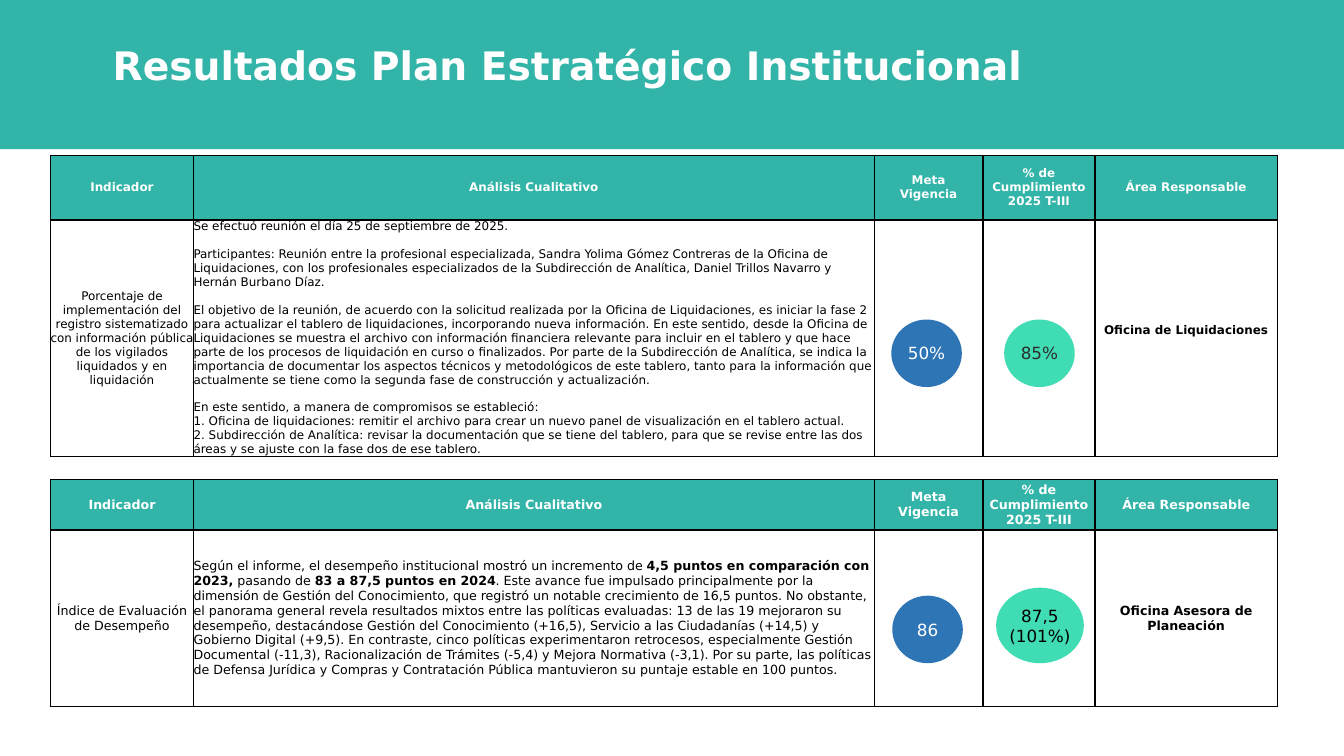
"""Build the slide with the results of the institutional strategic plan."""
from dataclasses import dataclass

import lxml.etree
import pptx
import pptx.dml.color
import pptx.enum.shapes
import pptx.enum.text
import pptx.oxml.ns
import pptx.slide
import pptx.table
import pptx.text.text
import pptx.util

PX = 9144
FONT = "DejaVu Sans"
COLORS = {
    "teal": "32B4A8",
    "mint": "40DCB3",
    "blue": "2E75B6",
    "white": "FFFFFF",
    "black": "000000",
    "charcoal": "2D2D2D",
}
CENTER = pptx.enum.text.PP_ALIGN.CENTER
LEFT = pptx.enum.text.PP_ALIGN.LEFT
MIDDLE = pptx.enum.text.MSO_ANCHOR.MIDDLE
COLUMN_WIDTHS = (142, 675, 108, 111, 181)
HEADINGS = (
    "Indicador",
    "Análisis Cualitativo",
    "Meta\vVigencia",
    "% de Cumplimiento 2025 T-III",
    "Área Responsable",
)


@dataclass(frozen=True)
class Paragraph:
    text: str
    space_before: float = 0


@dataclass(frozen=True)
class Indicator:
    top: int
    header_height: int
    body_height: int
    size: float
    name: str
    analysis: tuple[Paragraph, ...]
    area: str
    area_bottom: int = 0


@dataclass(frozen=True)
class Score:
    left: int
    top: int
    width: int
    height: int
    fill: str
    ink: str
    lines: tuple[str, ...]


BLANK_LINE = 9.9
PERFORMANCE_GAINS = (
    "Según el informe, el desempeño institucional mostró un incremento de **4,5 puntos "
    "en comparación con 2023,** pasando de **83 a 87,5 puntos en 2024**. Este avance "
    "fue impulsado principalmente por la dimensión de Gestión del Conocimiento, que "
    "registró un notable crecimiento de 16,5 puntos."
)
POLICY_RESULTS = (
    "No obstante, el panorama general revela resultados mixtos entre las políticas "
    "evaluadas: 13 de las 19 mejoraron su desempeño, destacándose Gestión del "
    "Conocimiento (+16,5), Servicio a las Ciudadanías (+14,5) y Gobierno Digital (+9,5). "
    "En contraste, cinco políticas experimentaron retrocesos, especialmente Gestión "
    "Documental (-11,3), Racionalización de Trámites (-5,4) y Mejora Normativa (-3,1). "
    "Por su parte, las políticas de Defensa Jurídica y Compras y Contratación Pública "
    "mantuvieron su puntaje estable en 100 puntos."
)
INDICATORS = (
    Indicator(
        154, 64, 235, 8.5,
        "Porcentaje de implementación del registro sistematizado con información "
        "pública de los vigilados liquidados y en liquidación",
        (
            Paragraph("Se efectuó reunión el día 25 de septiembre de 2025."),
            Paragraph(
                "Participantes: Reunión entre la profesional especializada, Sandra Yolima Gómez "
                "Contreras de la Oficina de Liquidaciones, con los profesionales especializados "
                "de la Subdirección de Analítica, Daniel Trillos Navarro y Hernán Burbano Díaz.",
                BLANK_LINE),
            Paragraph(
                "El objetivo de la reunión, de acuerdo con la solicitud realizada por la Oficina "
                "de Liquidaciones, es iniciar la fase 2 para actualizar el tablero de "
                "liquidaciones, incorporando nueva información. En este sentido, desde la Oficina "
                "de Liquidaciones se muestra el archivo con información financiera relevante para "
                "incluir en el tablero y que hace parte de los procesos de liquidación en curso o "
                "finalizados. Por parte de la Subdirección de Analítica, se indica la importancia "
                "de documentar los aspectos técnicos y metodológicos de este tablero, tanto para "
                "la información que actualmente se tiene como la segunda fase de construcción y "
                "actualización.",
                BLANK_LINE),
            Paragraph("En este sentido, a manera de compromisos se estableció:", BLANK_LINE),
            Paragraph(
                "1. Oficina de liquidaciones: remitir el archivo para crear un nuevo panel de "
                "visualización en el tablero actual."),
            Paragraph(
                "2. Subdirección de Analítica: revisar la documentación que se tiene del tablero, "
                "para que se revise entre las dos áreas y se ajuste con la fase dos de ese "
                "tablero."),
        ),
        "Oficina de Liquidaciones", 15),
    Indicator(
        476, 50, 175, 9,
        "Índice de Evaluación de Desempeño",
        (Paragraph(" ".join((PERFORMANCE_GAINS, POLICY_RESULTS))),),
        "Oficina Asesora de Planeación"),
)
SCORES = (
    Score(996, 317, 70, 67, "mint", "charcoal", ("85%",)),
    Score(884, 317, 70, 67, "blue", "white", ("50%",)),
    Score(988, 583, 87, 75, "mint", "black", ("87,5", "(101%)")),
    Score(885, 591, 70, 67, "blue", "white", ("86",)),
)


def rgb(color: str) -> pptx.dml.color.RGBColor:
    return pptx.dml.color.RGBColor.from_string(COLORS[color])


def apply(target: object, values: dict[str, object]) -> None:
    for name, value in values.items():
        setattr(target, name, value)


def write(frame: pptx.text.text.TextFrame, paragraphs: tuple[Paragraph, ...], size: float,
          ink: str, bold: bool = False, align: int = CENTER) -> None:
    for index, content in enumerate(paragraphs):
        line = frame.paragraphs[0] if index == 0 else frame.add_paragraph()
        line.alignment = align
        if content.space_before:
            line.space_before = pptx.util.Pt(content.space_before)
        for span, emphasis in enumerate(content.text.split("**")):
            for part, words in enumerate(emphasis.split("\v")):
                if part:
                    line.add_line_break()
                run = line.add_run()
                run.text = words
                apply(run.font, {"name": FONT, "size": pptx.util.Pt(size),
                                 "bold": bold or span % 2 == 1})
                run.font.color.rgb = rgb(ink)


def format_cell(cell: pptx.table._Cell, header: bool, bottom: int = 0) -> None:
    apply(cell, {"margin_left": 0, "margin_right": 0, "margin_top": 0,
                 "margin_bottom": bottom * PX, "vertical_anchor": MIDDLE})
    qn = pptx.oxml.ns.qn
    properties = cell._tc.get_or_add_tcPr()
    weights = {"lnL": 1, "lnR": 1, "lnT": 1 if header else 2, "lnB": 2 if header else 1}
    for side, weight in weights.items():
        border = lxml.etree.SubElement(properties, qn(f"a:{side}"), w=str(pptx.util.Pt(weight)))
        paint = lxml.etree.SubElement(border, qn("a:solidFill"))
        lxml.etree.SubElement(paint, qn("a:srgbClr"), val=COLORS["black"])
    if header:
        cell.fill.solid()
        cell.fill.fore_color.rgb = rgb("teal")
    else:
        cell.fill.background()


def draw_indicator(slide: pptx.slide.Slide, item: Indicator) -> None:
    heights = (item.header_height, item.body_height)
    grid = slide.shapes.add_table(2, len(HEADINGS), 50 * PX, item.top * PX,
                                  sum(COLUMN_WIDTHS) * PX, sum(heights) * PX).table
    apply(grid, {"first_row": False, "horz_banding": False})
    for row, height in zip(grid.rows, heights):
        row.height = height * PX
    for index, (heading, width) in enumerate(zip(HEADINGS, COLUMN_WIDTHS)):
        grid.columns[index].width = width * PX
        format_cell(grid.cell(0, index), True)
        format_cell(grid.cell(1, index), False, item.area_bottom if index == 4 else 0)
        write(grid.cell(0, index).text_frame, (Paragraph(heading),), item.size, "white", True)
    write(grid.cell(1, 0).text_frame, (Paragraph(item.name),), item.size, "black")
    write(grid.cell(1, 1).text_frame, item.analysis, item.size, "black", align=LEFT)
    write(grid.cell(1, 4).text_frame, (Paragraph(item.area),), item.size, "black", True)


def draw_shape(slide: pptx.slide.Slide, preset: int, box: tuple[int, ...],
               fill: str) -> pptx.text.text.TextFrame:
    shape = slide.shapes.add_shape(preset, *(length * PX for length in box))
    shape.shadow.inherit = False
    shape.fill.solid()
    shape.fill.fore_color.rgb = rgb(fill)
    shape.line.fill.background()
    return shape.text_frame


def draw_score(slide: pptx.slide.Slide, score: Score) -> None:
    frame = draw_shape(slide, pptx.enum.shapes.MSO_SHAPE.OVAL,
                       (score.left, score.top, score.width, score.height), score.fill)
    apply(frame, {"margin_left": 0, "margin_right": 0, "margin_top": 0, "margin_bottom": 0,
                  "word_wrap": False, "vertical_anchor": MIDDLE})
    write(frame, tuple(Paragraph(line) for line in score.lines), 12, score.ink)


def main() -> None:
    deck = pptx.Presentation()
    apply(deck, {"slide_width": 1333 * PX, "slide_height": 750 * PX})
    slide = deck.slides.add_slide(deck.slide_layouts[6])
    draw_shape(slide, pptx.enum.shapes.MSO_SHAPE.RECTANGLE, (0, 0, 1333, 148), "teal")
    for item in INDICATORS:
        draw_indicator(slide, item)
    for score in SCORES:
        draw_score(slide, score)
    title = slide.shapes.add_textbox(100 * PX, 36 * PX, 925 * PX, 57 * PX).text_frame
    title.word_wrap = True
    write(title, (Paragraph("Resultados Plan Estratégico Institucional"),), 28, "white", True)
    deck.save("out.pptx")


if __name__ == "__main__":
    main()
